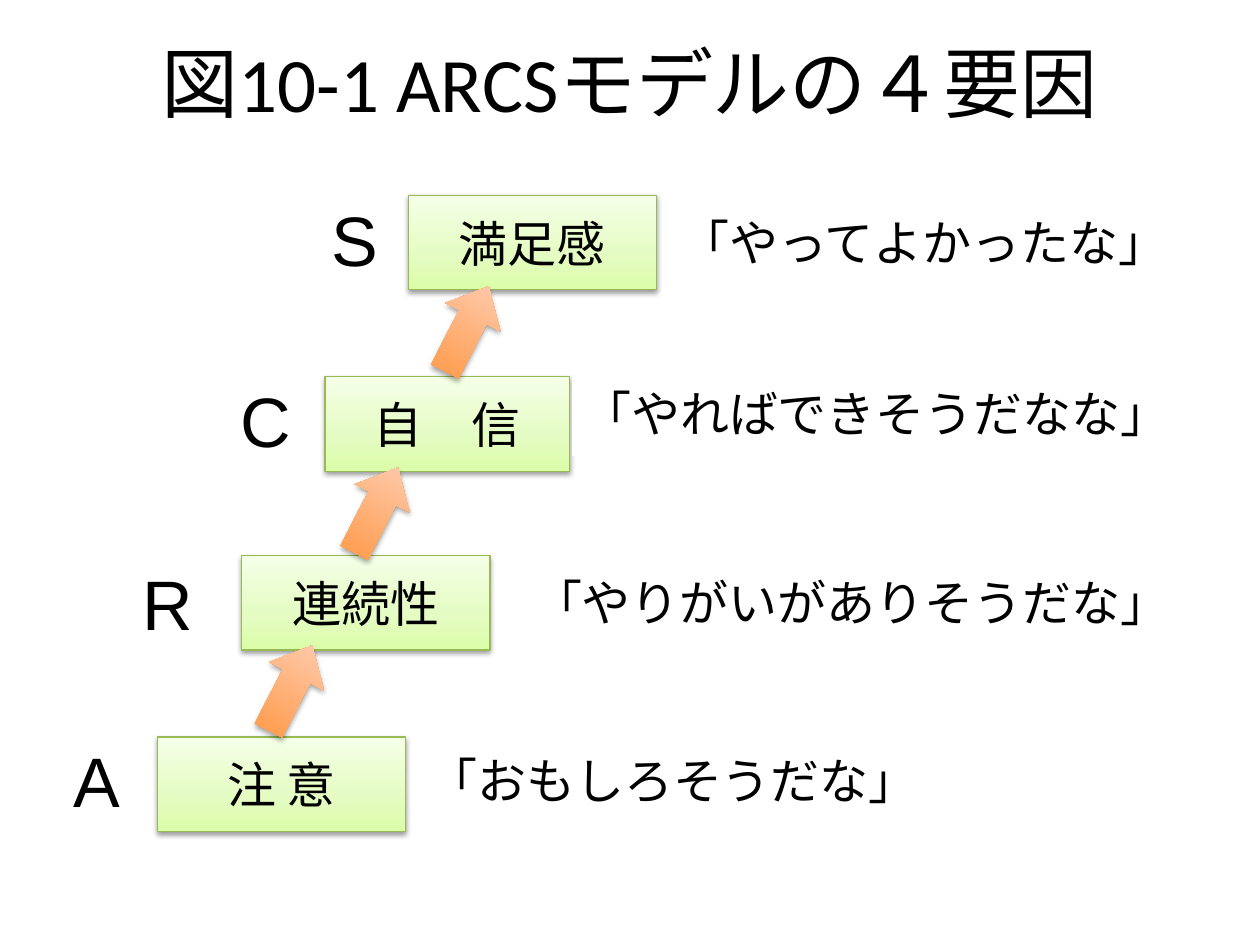
from lxml.etree import SubElement as Sub
from pptx import Presentation
from pptx.dml.color import RGBColor
from pptx.enum.shapes import MSO_SHAPE as Kind
from pptx.enum.text import MSO_ANCHOR as Anchor, PP_ALIGN as Align
from pptx.oxml.ns import qn
from pptx.util import Pt


def color(code):
    return RGBColor.from_string(code)


class Deck:
    ink, paper, edge = "000000", "FFFFFF", "98B955"
    green = [(0, "DAFDA7"), (35, "E4FCC2"), (100, "F5FFE7")]
    orange = [(0, "FF953E"), (100, "FFD2BD")]
    face, head = "Arial", "Calibri"

    def __init__(self, slide):
        self.slide = slide

    def letter(self, shape, text, size, face, align):
        frame = shape.text_frame
        frame.word_wrap = True
        frame.vertical_anchor = Anchor.MIDDLE
        frame.text = text
        para = frame.paragraphs[0]
        para.alignment = align
        font = para.runs[0].font
        font.size, font.name = Pt(size), face
        font.color.rgb = color(self.ink)

    def title(self, text, *spot):
        box = self.slide.shapes.add_textbox(*map(Pt, spot))
        self.letter(box, text, 44, self.head, Align.CENTER)

    def shape(self, kind, *spot):
        item = self.slide.shapes.add_shape(kind, *map(Pt, spot))
        item.shadow.inherit = False
        item.line.fill.background()
        frame = item.text_frame
        frame.margin_left = frame.margin_right = Pt(5.8)
        frame.margin_top = frame.margin_bottom = Pt(0.7)
        return item

    def shade(self, item, stops):
        """Fill upwards with the stops."""
        item.fill.gradient()
        item.fill.gradient_angle = 90
        group = item._element.spPr.find(qn("a:gradFill")).find(qn("a:gsLst"))
        for old in list(group):
            group.remove(old)
        for place, code in stops:
            stop = Sub(group, qn("a:gs"), pos=str(place * 1000))
            Sub(stop, qn("a:srgbClr"), val=code)

    def drop(self, item, alpha, gap):
        """Cast a soft shadow straight down."""
        effects = item._element.spPr.find(qn("a:effectLst"))
        cast = Sub(effects, qn("a:outerShdw"), blurRad=str(Pt(3.1)),
                   dist=str(Pt(gap)), dir="5400000", rotWithShape="0")
        tone = Sub(cast, qn("a:srgbClr"), val=self.ink)
        Sub(tone, qn("a:alpha"), val=str(alpha * 1000))

    def step(self, text, *spot):
        box = self.shape(Kind.RECTANGLE, *spot)
        self.shade(box, self.green)
        box.line.color.rgb = color(self.edge)
        box.line.width = Pt(0.75)
        self.drop(box, 38, 1.6)
        self.letter(box, text, 28, self.face, Align.CENTER)

    def arrow(self, left, top):
        item = self.shape(Kind.UP_ARROW, left, top, 35.3, 54.7)
        item.adjustments[0], item.adjustments[1] = 0.5, 0.56
        item.rotation = 27.2
        self.shade(item, self.orange)
        self.drop(item, 35, 1.8)

    def label(self, text, size, *spot):
        box = self.shape(Kind.RECTANGLE, *spot)
        box.fill.solid()
        box.fill.fore_color.rgb = color(self.paper)
        self.letter(box, text, size, self.face, Align.JUSTIFY)


# Steps from bottom to top: text, left, top, width
STEPS = [
    ("注 意", 90, 421.2, 141.8),
    ("連続性", 138.2, 317.5, 141.8),
    ("自　信", 185.8, 215.3, 139.7),
    ("満足感", 233.3, 111.6, 141.8),
]
ARROWS = [(148.3, 365.8), (197.3, 264.2), (249.1, 160.6)]
# Labels: text, left, top, width
QUOTES = [
    ("「おもしろそうだな」", 239, 421.2, 385.2),
    ("「やりがいがありそうだな」", 298.8, 319.7, 385.2),
    ("「やればできそうだなな」", 326.9, 211.7, 361.4),
    ("「やってよかったな」", 383, 113.8, 307.4),
]
LETTERS = [
    ("A", 36, 421.2),
    ("R", 75.6, 319.7),
    ("C", 131.8, 215.3),
    ("S", 183.6, 111.6),
]


def main():
    show = Presentation()
    show.slide_width, show.slide_height = Pt(720), Pt(540)
    deck = Deck(show.slides.add_slide(show.slide_layouts[6]))

    # Title
    deck.title("図10-1 ARCSモデルの４要因", 36, 10.8, 648, 71.3)

    # Stairs
    for text, left, top, width in STEPS:
        deck.step(text, left, top, width, 54)
    for left, top in ARROWS:
        deck.arrow(left, top)

    # Quotes and initials
    for text, left, top, width in QUOTES:
        deck.label(text, 28, left, top, width, 49)
    for text, left, top in LETTERS:
        deck.label(text, 40, left, top, 44.6, 49)

    show.save("out.pptx")


if __name__ == "__main__":
    main()
